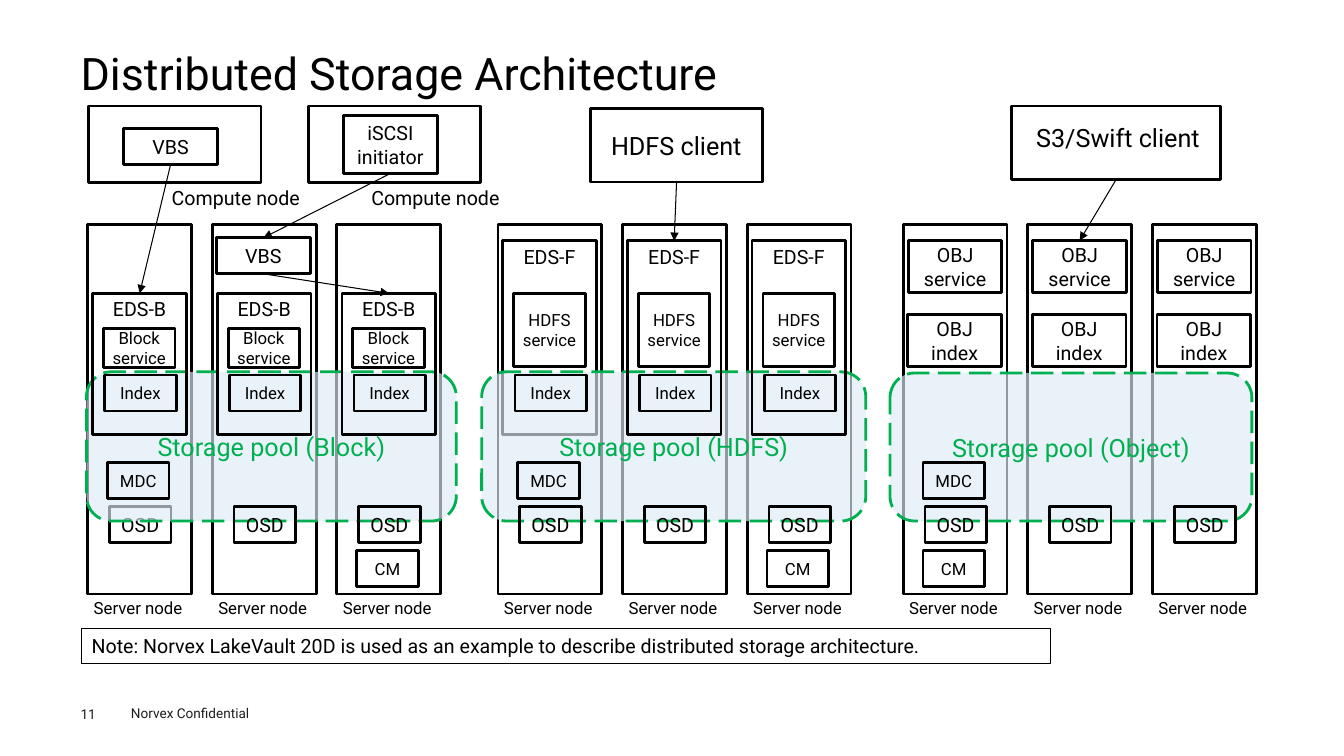
from lxml.etree import SubElement
from pptx import Presentation
from pptx.dml.color import RGBColor
from pptx.enum.dml import MSO_LINE_DASH_STYLE as Dash
from pptx.enum.shapes import MSO_CONNECTOR as Connector, MSO_SHAPE as Preset
from pptx.enum.text import MSO_ANCHOR as Anchor, PP_ALIGN as Align
from pptx.oxml.ns import qn
from pptx.util import Cm, Pt

BLACK = RGBColor(0x00, 0x00, 0x00)
GREEN = RGBColor(0x00, 0xB0, 0x50)
PALE_BLUE = RGBColor(0xDE, 0xEB, 0xF7)
FOOTER_GREY = RGBColor(0x1D, 0x1D, 0x1B)
FONT = "Roboto"

BOX_FRAME = {"word_wrap": True, "margin_left": Cm(0.2), "margin_right": Cm(0.2),
             "margin_top": Cm(0.1), "margin_bottom": Cm(0.1)}
TIGHT_FRAME = {"word_wrap": True, "margin_left": 0, "margin_right": 0,
               "margin_top": 0, "margin_bottom": 0}

# Server nodes: three per pool
COLUMN_PITCH = 3.14
NODE_TOP, NODE_WIDTH, NODE_HEIGHT = 5.65, 2.62, 9.32
POOL_STARTS = {"Block": 2.21, "HDFS": 12.55, "Object": 22.76}
POOL_AREAS = {"Block": (2.18, 9.37, 9.32, 3.76),
              "HDFS": (12.14, 9.37, 9.68, 3.76),
              "Object": (22.43, 9.4, 9.12, 3.73)}

# Part: offset from the node's left edge, top, width, height, text size, anchor
PARTS = {
    "EDS-B": (0.13, 7.39, 2.36, 3.57, 14, Anchor.TOP),
    "EDS-F": (0.12, 6.07, 2.36, 4.89, 14, Anchor.TOP),
    "VBS": (0.11, 5.99, 2.36, 0.91, 14, Anchor.MIDDLE),
    "OBJ service": (0.13, 6.06, 2.36, 1.32, 14, Anchor.MIDDLE),
    "OBJ index": (0.12, 7.92, 2.36, 1.32, 14, Anchor.MIDDLE),
    "Block\nservice": (0.4, 8.27, 1.8, 0.99, 12, Anchor.MIDDLE),
    "HDFS service": (0.4, 7.4, 1.8, 1.83, 12, Anchor.MIDDLE),
    "Index": (0.43, 9.45, 1.8, 0.91, 12, Anchor.MIDDLE),
    "MDC": (0.5, 11.65, 1.55, 0.91, 12, Anchor.MIDDLE),
    "OSD": (0.55, 12.76, 1.55, 0.91, 14, Anchor.MIDDLE),
    "CM": (0.5, 13.88, 1.55, 0.91, 12, Anchor.MIDDLE),
}
BLOCK_PARTS = ["EDS-B", "Block\nservice", "Index"]
HDFS_PARTS = ["EDS-F", "HDFS service", "Index", "OSD"]
OBJECT_PARTS = ["OBJ service", "OBJ index", "OSD"]
PARTS_BEHIND_POOLS = {("Block", 0): ["OSD"], ("HDFS", 0): ["EDS-F"]}
PARTS_IN_FRONT = {
    ("Block", 0): BLOCK_PARTS + ["MDC"],
    ("Block", 1): BLOCK_PARTS + ["VBS", "OSD"],
    ("Block", 2): BLOCK_PARTS + ["OSD", "CM"],
    ("HDFS", 0): HDFS_PARTS[1:] + ["MDC"],
    ("HDFS", 1): HDFS_PARTS,
    ("HDFS", 2): HDFS_PARTS + ["CM"],
    ("Object", 0): OBJECT_PARTS + ["MDC", "CM"],
    ("Object", 1): OBJECT_PARTS,
    ("Object", 2): OBJECT_PARTS,
}


def apply_format(target, values):
    for name, value in values.items():
        setattr(target, name, value)


def write_text(shape, text, size, color=BLACK, align=Align.CENTER, spacing=None):
    shape.text_frame.text = text
    for paragraph in shape.text_frame.paragraphs:
        apply_format(paragraph, {"alignment": align, "line_spacing": spacing})
        apply_format(paragraph.font, {"name": FONT, "size": Pt(size), "bold": False})
        paragraph.font.color.rgb = color


def add_box(slide, area, text="", size=14, anchor=Anchor.MIDDLE,
            preset=Preset.RECTANGLE, color=BLACK, line_width=2):
    shape = slide.shapes.add_shape(preset, *map(Cm, area))
    shape.shadow.inherit = False
    shape.fill.background()
    shape.line.color.rgb = color
    shape.line.width = Pt(line_width)
    apply_format(shape.text_frame, {**BOX_FRAME, "vertical_anchor": anchor})
    if text:
        write_text(shape, text, size, color)
    return shape


def add_label(slide, area, text, size, color=BLACK, align=Align.CENTER):
    label = slide.shapes.add_textbox(*map(Cm, area))
    label.text_frame.word_wrap = True
    write_text(label, text, size, color, align)
    return label


def add_pool(slide, name):
    pool = add_box(slide, POOL_AREAS[name], f"Storage pool ({name})", 18,
                   preset=Preset.ROUNDED_RECTANGLE, color=GREEN)
    pool.line.dash_style = Dash.LONG_DASH
    pool.fill.solid()
    pool.fill.fore_color.rgb = PALE_BLUE
    fill_color = pool.element.spPr.find(qn("a:solidFill"))[0]
    SubElement(fill_color, qn("a:alpha"), val="65000")


def add_arrow(slide, start, start_side, end):
    """Join a side of one box to the top of another."""
    arrow = slide.shapes.add_connector(Connector.STRAIGHT, 0, 0, 0, 0)
    arrow.begin_connect(start, start_side)
    arrow.end_connect(end, 0)
    arrow.line.color.rgb = BLACK
    arrow.line.width = Pt(0.75)
    SubElement(arrow.line._get_or_add_ln(), qn("a:tailEnd"), type="triangle")
    SubElement(arrow.element.spPr, qn("a:effectLst"))


def node_left(pool, column):
    return POOL_STARTS[pool] + column * COLUMN_PITCH


def add_parts(slide, layout):
    """Draw the parts of each node and return them by pool, column and name."""
    boxes = {}
    for (pool, column), names in layout.items():
        for name in names:
            offset, top, width, height, size, anchor = PARTS[name]
            area = (node_left(pool, column) + offset, top, width, height)
            boxes[pool, column, name] = add_box(slide, area, name, size, anchor)
    return boxes


def add_server_nodes(slide):
    for pool in POOL_STARTS:
        for column in range(3):
            left = node_left(pool, column)
            add_box(slide, (left, NODE_TOP, NODE_WIDTH, NODE_HEIGHT))
            add_label(slide, (left - 0.23, 14.95, 3, 0.86), "Server node", 12)


def add_clients(slide, boxes):
    add_box(slide, (2.24, 2.67, 4.34, 1.93))
    add_label(slide, (3.81, 4.55, 4.27, 1.02), "Compute node", 14)
    vbs = add_box(slide, (3.12, 3.23, 2.36, 0.91), "VBS")
    add_box(slide, (7.77, 2.67, 4.34, 1.93))
    add_label(slide, (8.84, 4.55, 4.27, 1.02), "Compute node", 14)
    initiator = add_box(slide, (8.66, 2.92, 2.36, 1.45), "iSCSI initiator")
    hdfs = add_box(slide, (14.88, 2.74, 4.34, 1.85))
    add_label(slide, (14.91, 3.15, 4.27, 1.02), "HDFS client", 18)
    swift = add_box(slide, (25.5, 2.67, 5.26, 1.85))
    add_label(slide, (25.65, 2.97, 5.05, 1.02), "S3/Swift client", 18)

    server_vbs = boxes["Block", 1, "VBS"]
    for start, end in [(vbs, boxes["Block", 0, "EDS-B"]),
                       (initiator, server_vbs),
                       (server_vbs, boxes["Block", 2, "EDS-B"]),
                       (hdfs, boxes["HDFS", 1, "EDS-F"]),
                       (swift, boxes["Object", 1, "OBJ service"])]:
        add_arrow(slide, start, 2, end)


def add_title(slide, text):
    title = slide.shapes.title
    apply_format(title, {"left": Cm(2.03), "top": Cm(1.24),
                         "width": Cm(29.79), "height": Cm(1.37)})
    apply_format(title.text_frame, {**TIGHT_FRAME, "vertical_anchor": Anchor.MIDDLE})
    write_text(title, text, 32, align=Align.LEFT, spacing=0.9)


def add_note_and_footer(slide):
    note = add_label(slide, (2.06, 15.85, 24.41, 0.86),
                     "Note: Norvex LakeVault 20D is used as an example to describe "
                     "distributed storage architecture.", 14, align=Align.LEFT)
    note.line.color.rgb = BLACK
    note.line.width = Pt(0.75)
    add_label(slide, (3.05, 17.65, 4.06, 0.69), "Norvex Confidential", 9.7,
              FOOTER_GREY, Align.LEFT)
    number = add_label(slide, (2.03, 17.78, 1.4, 0.41), "11", 9.7,
                       FOOTER_GREY, Align.LEFT)
    apply_format(number.text_frame, TIGHT_FRAME)


def main():
    presentation = Presentation()
    apply_format(presentation, {"slide_width": Cm(33.87), "slide_height": Cm(19.05)})
    slide = presentation.slides.add_slide(presentation.slide_layouts[5])
    add_title(slide, "Distributed Storage Architecture")
    add_server_nodes(slide)
    add_parts(slide, PARTS_BEHIND_POOLS)
    for pool in POOL_AREAS:
        add_pool(slide, pool)
    boxes = add_parts(slide, PARTS_IN_FRONT)
    add_clients(slide, boxes)
    add_note_and_footer(slide)
    presentation.save("out.pptx")


if __name__ == "__main__":
    main()
